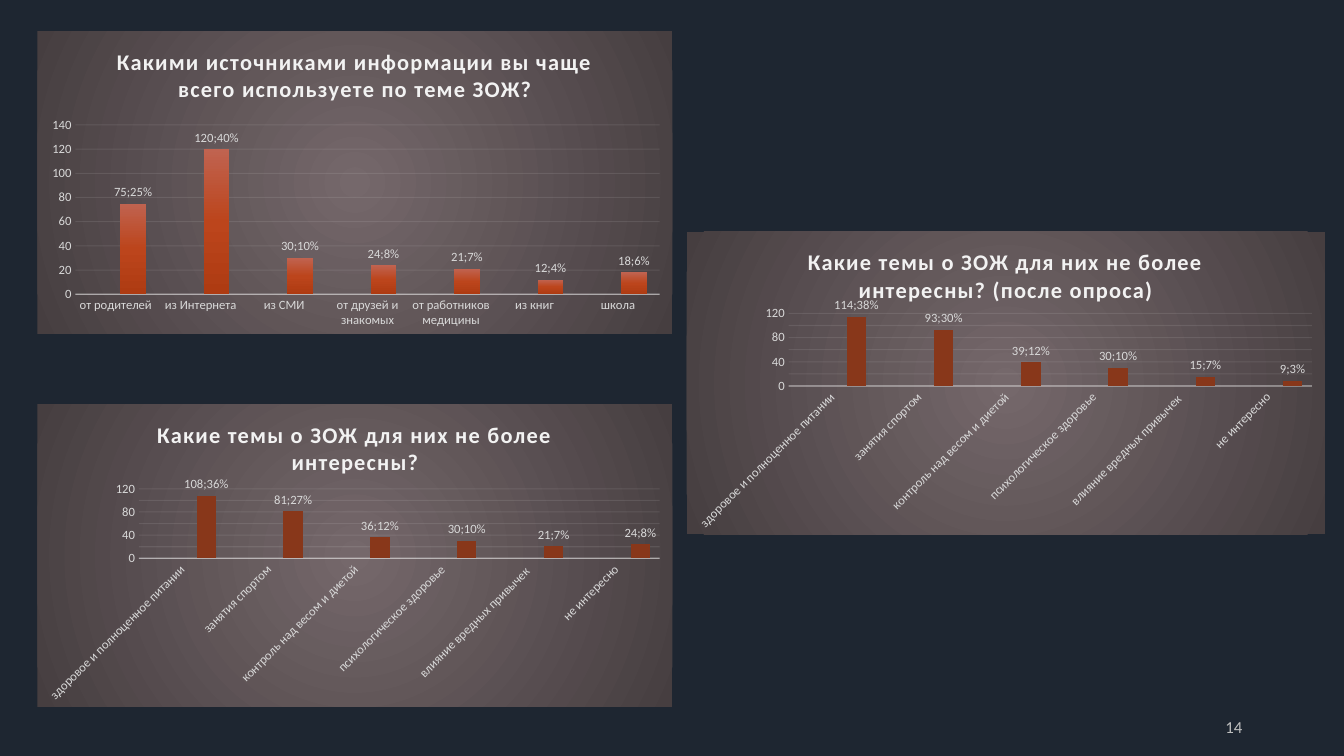
from lxml import etree
from pptx import Presentation
from pptx.chart.data import CategoryChartData
from pptx.dml.color import RGBColor
from pptx.enum.chart import XL_CHART_TYPE, XL_LABEL_POSITION, XL_TICK_MARK
from pptx.enum.text import MSO_ANCHOR, PP_ALIGN
from pptx.oxml import parse_xml
from pptx.oxml.ns import nsdecls, qn
from pptx.util import Inches, Pt

COLUMN = XL_CHART_TYPE.COLUMN_CLUSTERED
OUTSIDE_END = XL_LABEL_POSITION.OUTSIDE_END
NO_TICK = XL_TICK_MARK.NONE
MIDDLE = MSO_ANCHOR.MIDDLE
RIGHT = PP_ALIGN.RIGHT

FONT = "Calibri"
LINEAR = '<a:lin ang="5400000" scaled="0"/>'
RADIAL = ('<a:path path="circle"><a:fillToRect l="50000" t="50000" '
          'r="50000" b="50000"/></a:path>')
PANEL = ["75686B", "463E40"]
BRIGHT = ["D76D51", "D5541F", "C54714"]
MEDIUM = ["C06350", "BC451C", "AE3B12"]
DARK = ["A35C4E", "9C3A17", "90310F"]
SOLID = ["88371A"]

SOURCES = ["от родителей ", "из Интернета", "из СМИ", "от друзей и знакомых",
           "от работников медицины", "из книг", "школа"]
TOPICS = ["здоровое и полноценное питании", "занятия спортом",
          "контроль над весом и диетой", "психологическое здоровье",
          "влияние вредных привычек ", "не интересно"]

surveys = [
    dict(title="Какими источниками информации вы чаще всего используете по теме ЗОЖ?",
         box=(0.37, 0.31, 6.3, 3), plot=(0.06, 0.31, 0.92, 0.56),
         categories=SOURCES, top=140, angle=0, colors=[BRIGHT, MEDIUM],
         answers=[(75, 25), (120, 40), (30, 10), (24, 8), (21, 7), (12, 4), (18, 6)]),
    dict(title="Какие темы о ЗОЖ для них не более интересны?",
         box=(0.37, 4.01, 6.3, 3), plot=(0.16, 0.28, 0.82, 0.23),
         categories=TOPICS, top=120, angle=-45, colors=[DARK, MEDIUM, SOLID],
         answers=[(108, 36), (81, 27), (36, 12), (30, 10), (21, 7), (24, 8)]),
    dict(title="Какие темы о ЗОЖ для них не более интересны? (после опроса)",
         box=(6.81, 2.3, 6.33, 3), plot=(0.16, 0.27, 0.82, 0.24),
         categories=TOPICS, top=120, angle=-45, colors=[BRIGHT, MEDIUM, SOLID],
         answers=[(114, 38), (93, 30), (39, 12), (30, 10), (15, 7), (9, 3)]),
]


def style_font(font, size, color):
    font.name = FONT
    font.size = Pt(size)
    font.color.rgb = RGBColor.from_string(color)


def gradient(colors, direction):
    stops = "".join(
        f'<a:gs pos="{100000 * i // (len(colors) - 1)}"><a:srgbClr val="{color}"/></a:gs>'
        for i, color in enumerate(colors))
    return parse_xml(f'<a:gradFill {nsdecls("a")} rotWithShape="1">'
                     f'<a:gsLst>{stops}</a:gsLst>{direction}</a:gradFill>')


prs = Presentation()
prs.slide_width, prs.slide_height = Inches(13.33), Inches(7.5)
slide = prs.slides.add_slide(prs.slide_layouts[6])
slide.background.fill.solid()
slide.background.fill.fore_color.rgb = RGBColor.from_string("1E2631")

number_box = slide.shapes.add_textbox(Inches(9.42), Inches(7.01), Inches(3), Inches(0.4))
number_box.text_frame.word_wrap = True
number_box.text_frame.vertical_anchor = MIDDLE
number_line = number_box.text_frame.paragraphs[0]
number_line.alignment = RIGHT
page_number = number_line.add_run()
page_number.text = "14"
style_font(page_number.font, 12, "BFBFBF")

for survey in surveys:
    counts = [count for count, share in survey["answers"]]
    last = len(survey["colors"]) - 1
    data = CategoryChartData()
    data.categories = survey["categories"]
    for i in range(last + 1):
        data.add_series(f"Series {i + 1}", counts if i == last else [None] * len(counts))
    chart = slide.shapes.add_chart(COLUMN, *map(Inches, survey["box"]), data).chart
    style_font(chart.font, 10, "231F20")
    chart.has_legend = False

    panel = parse_xml(f'<c:spPr {nsdecls("c", "a")}><a:ln><a:noFill/></a:ln></c:spPr>')
    panel.insert(0, gradient(PANEL, RADIAL))
    chart.element.find(qn("c:chart")).addnext(panel)

    chart.has_title = True
    heading = chart.chart_title.text_frame.paragraphs[0].add_run()
    heading.text = survey["title"]
    style_font(heading.font, 16, "F2F2F2")
    heading.font.bold = True
    heading.font.element.set("spc", "100") if hasattr(heading.font, "element") else \
        heading._r.get_or_add_rPr().set("spc", "100")
    chart.chart_title.include_in_layout = False

    plot_area = chart.element.find(".//" + qn("c:plotArea"))
    for old in plot_area.findall(qn("c:layout")):
        plot_area.remove(old)
    layout = etree.SubElement(plot_area, qn("c:layout"))
    plot_area.insert(0, layout)
    manual = etree.SubElement(layout, qn("c:manualLayout"))
    settings = [("layoutTarget", "inner"), ("xMode", "edge"), ("yMode", "edge")]
    for tag, value in settings + list(zip("xywh", survey["plot"])):
        etree.SubElement(manual, qn(f"c:{tag}")).set("val", str(value))

    categories, values = chart.category_axis, chart.value_axis
    for axis in (categories, values):
        axis.major_tick_mark = axis.minor_tick_mark = NO_TICK
        style_font(axis.tick_labels.font, 9, "D9D9D9")
    if survey["angle"]:
        body = categories._element.find(qn("c:txPr")).find(qn("a:bodyPr"))
        body.set("rot", str(survey["angle"] * 60000))
        body.set("vert", "horz")
    values.minimum_scale, values.maximum_scale = 0, survey["top"]
    values.major_unit = 20
    values.has_major_gridlines = True
    values.format.line.fill.background()
    for line, width, opacity in ((categories.format.line, 1, 54),
                                 (values.major_gridlines.format.line, 0.75, 10)):
        line.width = Pt(width)
        line.color.rgb = RGBColor.from_string("F2F2F2")
    for owner, opacity in ((categories._element.find(qn("c:spPr")), 54),
                           (values._element.find(qn("c:majorGridlines")), 10)):
        tint = owner.find(".//" + qn("a:srgbClr"))
        etree.SubElement(tint, qn("a:alpha")).set("val", str(opacity * 1000))

    plot = chart.plots[0]
    plot.gap_width, plot.overlap = 100, -24
    plot.vary_by_categories = False
    for series, colors in zip(plot.series, survey["colors"]):
        if colors == SOLID:
            series.format.fill.solid()
            series.format.fill.fore_color.rgb = RGBColor.from_string(SOLID[0])
        else:
            series._element.get_or_add_spPr().insert(0, gradient(colors, LINEAR))

    answered = plot.series[last]
    answered.data_labels.show_value = True
    answered.data_labels.position = OUTSIDE_END
    style_font(answered.data_labels.font, 9, "D9D9D9")
    for i, (count, share) in enumerate(survey["answers"]):
        label = answered.points[i].data_label
        caption = label.text_frame.paragraphs[0].add_run()
        caption.text = f"{count};{share}%"
        style_font(caption.font, 9, "D9D9D9")
        label.position = OUTSIDE_END

prs.save("out.pptx")
